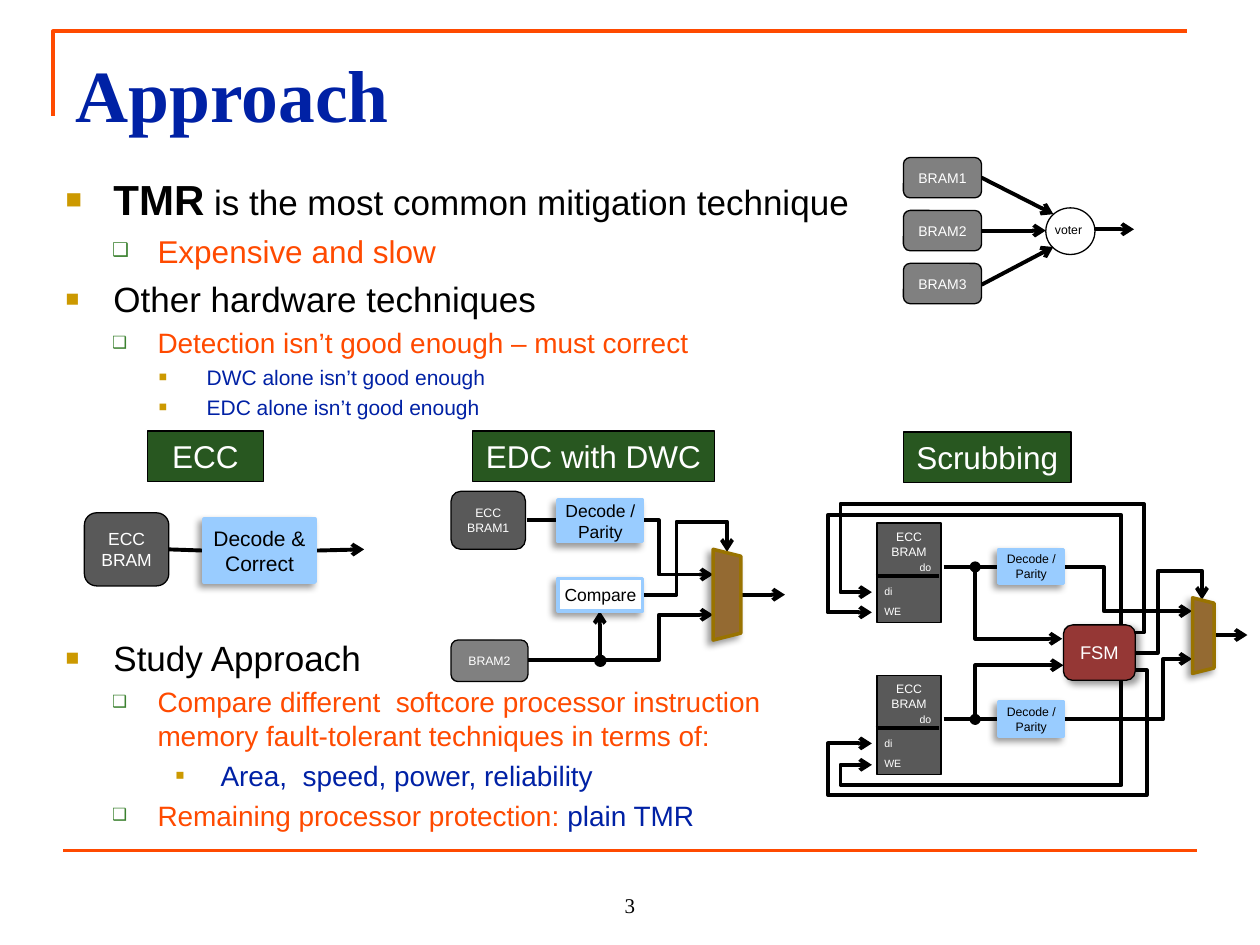
from dataclasses import dataclass
from typing import Optional

from lxml.etree import SubElement
from pptx import Presentation
from pptx.dml.color import RGBColor
from pptx.enum.shapes import MSO_CONNECTOR, MSO_SHAPE
from pptx.enum.text import MSO_ANCHOR, MSO_AUTO_SIZE, PP_ALIGN
from pptx.oxml.ns import qn
from pptx.util import Cm, Pt

COLORS = {
    "orange": "FF4A00", "blue": "0021A5", "black": "000000", "white": "FFFFFF",
    "gold": "CC9900", "leaf": "3B812F", "forest": "285720", "gray": "808080",
    "dark": "595959", "sky": "99CCFF", "brown": "946A32", "bronze": "997300",
    "red": "953735",
}
BULLETS = [("■", "gold", 65), ("❑", "leaf", 60), ("■", "gold", 65)]
INDENTS = [(0.38, 0.38), (0.73, 0.36), (1.12, 0.38)]
ROUND, RECT = MSO_SHAPE.ROUNDED_RECTANGLE, MSO_SHAPE.RECTANGLE


@dataclass
class Node:
    text: str
    box: tuple
    fill: str
    size: float = 8
    kind: int = ROUND
    line: str = "black"
    weight: float = 0.75
    color: str = "white"
    inset: float = 0.1
    shadow: Optional[int] = None
    anchor: int = MSO_ANCHOR.MIDDLE
    wrap: bool = True
    rotation: float = 0


@dataclass
class Wire:
    """Bends are the x and y values, in turn, at which the wire changes direction."""
    start: tuple
    end: tuple
    bends: Optional[tuple] = None
    arrow: bool = True
    vertical: bool = False


@dataclass
class Item:
    level: int
    runs: list
    indent: Optional[tuple] = None
    bullet: Optional[tuple] = None


def inch(v: float) -> int:
    return Cm(v * 2.54)


def rgb(name: str) -> RGBColor:
    return RGBColor.from_string(COLORS[name])


def set_all(obj, **values) -> None:
    for name, value in values.items():
        setattr(obj, name, value)


def add_run(p, text: str, size: float, color: str, bold=False, name="Arial") -> None:
    r = p.add_run()
    r.text = text
    set_all(r.font, size=Pt(size), bold=bold, name=name)
    r.font.color.rgb = rgb(color)


def stroke(sp, color: str, weight: float) -> None:
    sp.line.color.rgb = rgb(color)
    sp.line.width = Pt(weight)


def draw_label(s, text: str, box: tuple, size: float, color="white", align=PP_ALIGN.LEFT,
               anchor=MSO_ANCHOR.TOP, name="Arial") -> None:
    tf = s.shapes.add_textbox(*map(inch, box)).text_frame
    set_all(tf, word_wrap=False, vertical_anchor=anchor)
    p = tf.paragraphs[0]
    p.alignment = align
    add_run(p, text, size, color, name=name)


def draw_node(s, n: Node) -> None:
    sp = s.shapes.add_shape(n.kind, *map(inch, n.box))
    sp.rotation = n.rotation
    sp.fill.solid()
    sp.fill.fore_color.rgb = rgb(n.fill)
    stroke(sp, n.line, n.weight)
    sp.shadow.inherit = False
    if n.shadow is not None:
        effects = sp._element.spPr.find(qn("a:effectLst"))
        shadow = SubElement(effects, qn("a:outerShdw"), blurRad=str(Pt(4)), dist=str(Pt(3)),
                            dir=str(n.shadow * 60000), algn="ctr", rotWithShape="0")
        color = SubElement(shadow, qn("a:srgbClr"), val=COLORS["black"])
        SubElement(color, qn("a:alpha"), val="40000")
    if n.text:
        tf = sp.text_frame
        set_all(tf, word_wrap=n.wrap, vertical_anchor=n.anchor,
                margin_left=inch(n.inset), margin_right=inch(n.inset))
        p = tf.paragraphs[0]
        p.alignment = PP_ALIGN.CENTER
        add_run(p, n.text, n.size, n.color)


def draw_wire(s, w: Wire, color="black") -> None:
    kind = MSO_CONNECTOR.STRAIGHT if w.bends is None else MSO_CONNECTOR.ELBOW
    cx = s.shapes.add_connector(kind, *map(inch, w.start + w.end))
    stroke(cx, color, 2.25)
    spPr = cx._element.spPr
    if w.bends is not None:
        shape_elbow(cx, spPr, w)
    if w.arrow:
        SubElement(spPr.find(qn("a:ln")), qn("a:tailEnd"), type="arrow")
    SubElement(spPr, qn("a:effectLst"))


def shape_elbow(cx, spPr, w: Wire) -> None:
    """Set the bend positions; a wire that leaves vertically is turned by 90 degrees."""
    dx, dy = w.end[0] - w.start[0], w.end[1] - w.start[1]
    if w.vertical:
        mid_x, mid_y = w.start[0] + dx / 2, w.start[1] + dy / 2
        set_all(cx, left=inch(mid_x - abs(dy) / 2), top=inch(mid_y - abs(dx) / 2),
                width=inch(abs(dy)), height=inch(abs(dx)))
        for key, value in {"rot": 5400000, "flipH": int(dy < 0), "flipV": int(dx > 0)}.items():
            spPr.find(qn("a:xfrm")).set(key, str(value))
    geom = spPr.find(qn("a:prstGeom"))
    geom.set("prst", f"bentConnector{len(w.bends) + 2}")
    guides = geom.find(qn("a:avLst"))
    for i, bend in enumerate(w.bends):
        axis = (i + w.vertical) % 2
        ratio = (bend - w.start[axis]) / (dx, dy)[axis]
        SubElement(guides, qn("a:gd"), name=f"adj{i + 1}" , fmla=f"val {round(ratio * 100000)}")


def fill_list(ph, box: tuple, items: list) -> None:
    set_all(ph, **dict(zip(("left", "top", "width", "height"), map(inch, box))))
    tf = ph.text_frame
    set_all(tf, auto_size=MSO_AUTO_SIZE.NONE, vertical_anchor=MSO_ANCHOR.TOP)
    for i, item in enumerate(items):
        p = tf.paragraphs[0] if i == 0 else tf.add_paragraph()
        set_all(p, level=item.level, space_before=Pt(item.runs[0][1] * 0.23 if i else 0))
        left, hang = item.indent or INDENTS[item.level]
        char, color, percent = item.bullet or BULLETS[item.level]
        pPr = p._p.get_or_add_pPr()
        pPr.set("marL", str(inch(left)))
        pPr.set("indent", str(-inch(hang)))
        SubElement(SubElement(pPr, qn("a:buClr")), qn("a:srgbClr"), val=COLORS[color])
        SubElement(pPr, qn("a:buSzPct"), val=str(percent * 1000))
        SubElement(pPr, qn("a:buFont"), typeface="Arial")
        SubElement(pPr, qn("a:buChar"), char=char)
        for run in item.runs:
            add_run(p, *run)


def decoder(text: str, box: tuple, size: float, fill="sky") -> Node:
    return Node(text, box, fill, size, RECT, "sky", 2, "black", 0, 135)


def mux(box: tuple) -> Node:
    return Node("", box, "brown", kind=MSO_SHAPE.TRAPEZOID, line="bronze", weight=2,
                shadow=135, rotation=90)


def dot(box: tuple) -> Node:
    return Node("", box, "black", kind=MSO_SHAPE.OVAL, weight=2)


def draw_bank(s, y: float) -> None:
    """Draw one scrubbed memory with its decoder; y is the top of the memory."""
    wire_y = y + 0.35
    draw_node(s, Node("ECC BRAM", (6.96, y, 0.51, 0.79), "dark", 7, RECT, inset=0,
                      anchor=MSO_ANCHOR.TOP))
    draw_wire(s, Wire((6.95, y + 0.42), (7.45, y + 0.42), arrow=False))
    draw_label(s, "do", (7.19, y + 0.25, 0.3, 0.2), 6, align=PP_ALIGN.RIGHT)
    draw_label(s, "di", (6.92, y + 0.44, 0.27, 0.2), 6)
    draw_label(s, "WE", (6.92, y + 0.6, 0.34, 0.2), 6)
    draw_wire(s, Wire((7.49, wire_y), (7.93, wire_y), arrow=False))
    draw_node(s, dot((7.71, wire_y - 0.03, 0.06, 0.06)))
    draw_node(s, decoder("Decode / Parity", (7.93, y + 0.21, 0.51, 0.27), 7))


WIRES = [
    # Triple redundancy
    Wire((7.79, 1.41), (8.36, 1.7)), Wire((7.79, 1.83), (8.3, 1.83)),
    Wire((7.79, 2.26), (8.36, 1.96)), Wire((8.69, 1.82), (9, 1.82)),
    # ECC
    Wire((1.33, 4.36), (1.62, 4.37), arrow=False), Wire((2.5, 4.37), (2.89, 4.36)),
    # EDC with DWC
    Wire((4.18, 4.13), (4.43, 4.13), arrow=False), Wire((4.19, 5.24), (4.73, 5.24), arrow=False),
    Wire((4.76, 5.21), (4.76, 4.85)), Wire((5.88, 4.72), (6.23, 4.72)),
    Wire((5.1, 4.13), (5.66, 4.56), (5.23,)), Wire((5.1, 4.72), (5.77, 4.38), (5.37, 4.14)),
    Wire((4.8, 5.24), (5.66, 4.88), (5.23,)),
    # Scrubbing
    Wire((8.44, 4.5), (9.46, 4.85), (8.76,)), Wire((8.44, 5.71), (9.46, 5.23), (9.23,)),
    Wire((9.01, 5.18), (9.54, 4.76), (9.19, 4.53)), Wire((9.63, 5.04), (9.9, 5.04)),
    Wire((7.74, 4.53), (8.43, 5.07), (), vertical=True),
    Wire((7.74, 5.68), (8.44, 5.28), (), vertical=True),
    Wire((8.9, 4.96), (6.92, 4.86), (4.09, 6.57), vertical=True),
    Wire((9, 5.02), (6.92, 4.7), (9.08, 4, 6.67)),
    Wire((9.01, 5.32), (6.92, 5.9), (9.1, 6.31, 6.57)),
    Wire((8.9, 5.38), (6.92, 6.07), (6.23, 6.67), vertical=True),
]
NODES = [Node(f"BRAM{i + 1}", (7.17, 1.25 + 0.42 * i, 0.62, 0.32), "gray") for i in range(3)] + [
    Node("", (8.3, 1.65, 0.39, 0.37), "white", kind=MSO_SHAPE.FLOWCHART_CONNECTOR),
    Node("ECC BRAM", (0.67, 4.07, 0.67, 0.58), "dark", 10),
    decoder("Decode & Correct", (1.62, 4.12, 0.88, 0.5), 12),
    Node("ECC BRAM1", (3.58, 3.9, 0.59, 0.46), "dark", 7),
    Node("BRAM2", (3.58, 5.08, 0.61, 0.33), "gray", 7),
    mux((5.41, 4.61, 0.72, 0.22)), dot((4.73, 5.21, 0.07, 0.07)),
    decoder("Compare", (4.43, 4.59, 0.67, 0.26), 10, "white"),
    decoder("Decode / Parity", (4.43, 3.97, 0.67, 0.33), 10),
    mux((9.25, 4.96, 0.6, 0.17)),
    Node("FSM", (8.44, 4.96, 0.57, 0.44), "red", 10.5, shadow=45),
] + [Node(text, (x, y, w, 0.4), "forest", 18, RECT, wrap=False) for text, x, y, w in (
    ("ECC", 1.17, 3.42, 0.92), ("EDC with DWC", 3.75, 3.42, 1.92), ("Scrubbing", 7.17, 3.43, 1.33))]
TECHNIQUES = [
    Item(0, [("TMR", 24, "black", True), (" is the most common mitigation technique", 20, "black")]),
    Item(1, [("Expensive and slow", 18, "orange")]),
    Item(0, [("Other hardware techniques", 20, "black")]),
    Item(1, [("Detection isn’t good enough – must correct", 16, "orange")]),
    Item(2, [("DWC alone isn’t good enough", 12, "blue")]),
    Item(2, [("EDC alone isn’t good enough", 12, "blue")]),
]
STUDY = [
    Item(0, [("Study Approach", 20, "black")]),
    Item(1, [("Compare different  softcore processor instruction memory fault-tolerant "
              "techniques in terms of:", 16, "orange")]),
    Item(2, [("Area,  speed, power, reliability", 16, "blue")], (1.23, 0.36), ("▪", "gold", 100)),
    Item(1, [("Remaining processor protection: ", 16, "orange"), ("plain TMR", 16, "blue")]),
]


def main() -> None:
    prs = Presentation()
    set_all(prs, slide_width=inch(10), slide_height=inch(7.5))
    s = prs.slides.add_slide(prs.slide_layouts[3])
    title, techniques, study = s.placeholders

    builder = s.shapes.build_freeform(inch(0.42), inch(0.92))
    builder.add_line_segments([(inch(0.42), inch(0.25)), (inch(9.42), inch(0.25))], close=False)
    corner = builder.convert_to_shape()
    corner.fill.background()
    corner.shadow.inherit = False
    stroke(corner, "orange", 2.25)
    draw_wire(s, Wire((0.5, 6.75), (9.5, 6.75), arrow=False), "orange")

    set_all(title, left=inch(0.5), top=inch(0.3), width=inch(9.5), height=inch(1.03))
    set_all(title.text_frame, vertical_anchor=MSO_ANCHOR.MIDDLE, margin_bottom=inch(0.2))
    p = title.text_frame.paragraphs[0]
    p.alignment = PP_ALIGN.LEFT
    add_run(p, "Approach", 42, "blue", True, "Times New Roman")
    fill_list(techniques, (0.42, 1.33, 9.33, 1.75), TECHNIQUES)
    fill_list(study, (0.42, 5, 5.83, 1.75), STUDY)

    for wire in WIRES:
        draw_wire(s, wire)
    for node in NODES:
        draw_node(s, node)
    for y in (4.15, 5.36):
        draw_bank(s, y)
    draw_label(s, "voter", (8.27, 1.71, 0.42, 0.22), 7, "black", PP_ALIGN.CENTER, MSO_ANCHOR.MIDDLE)
    draw_label(s, "3", (4, 6.83, 2, 0.5), 12, "black", PP_ALIGN.CENTER, MSO_ANCHOR.BOTTOM,
               "Times New Roman")
    prs.save("out.pptx")


if __name__ == "__main__":
    main()
